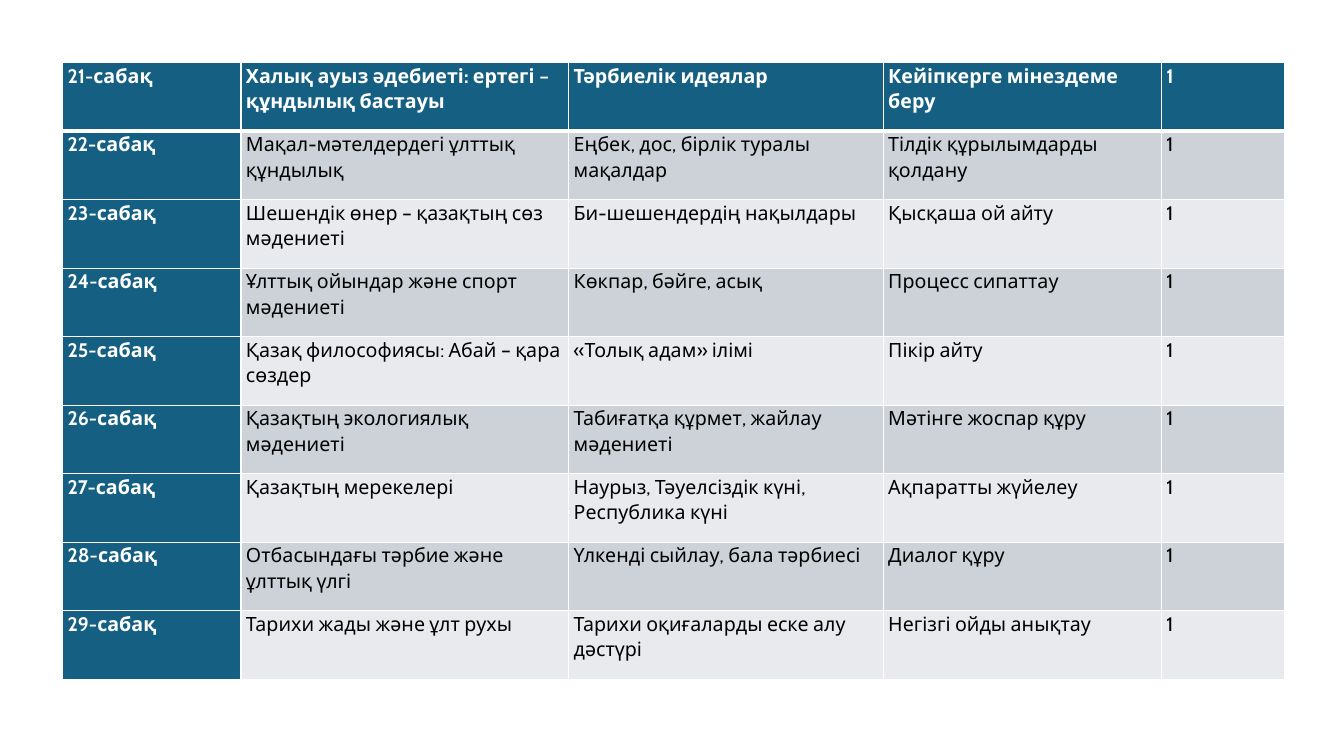
import pptx
import pptx.dml.color
import pptx.oxml
import pptx.oxml.ns
import pptx.util
from pptx.util import Inches

WHITE = pptx.dml.color.RGBColor(0xFF, 0xFF, 0xFF)
BLACK = pptx.dml.color.RGBColor(0x00, 0x00, 0x00)
TEAL = pptx.dml.color.RGBColor(0x15, 0x60, 0x82)
DARK_BAND = pptx.dml.color.RGBColor(0xCC, 0xD2, 0xD8)
LIGHT_BAND = pptx.dml.color.RGBColor(0xE8, 0xEA, 0xED)

FONT = "Cabin"
FIRST_LESSON = 21
HOURS = "1"
COLUMN_WIDTHS = [1.77, 3.25, 3.12, 2.76, 1.22]
ROW_HEIGHT = 0.68

# Topic, content and skill of each lesson
LESSONS = [
    ("Халық ауыз әдебиеті: ертегі – құндылық бастауы", "Тәрбиелік идеялар", "Кейіпкерге мінездеме беру"),
    ("Мақал-мәтелдердегі ұлттық құндылық", "Еңбек, дос, бірлік туралы мақалдар", "Тілдік құрылымдарды қолдану"),
    ("Шешендік өнер – қазақтың сөз мәдениеті", "Би-шешендердің нақылдары", "Қысқаша ой айту"),
    ("Ұлттық ойындар және спорт мәдениеті", "Көкпар, бәйге, асық", "Процесс сипаттау"),
    ("Қазақ философиясы: Абай – қара сөздер", "«Толық адам» ілімі", "Пікір айту"),
    ("Қазақтың экологиялық мәдениеті", "Табиғатқа құрмет, жайлау мәдениеті", "Мәтінге жоспар құру"),
    ("Қазақтың мерекелері", "Наурыз, Тәуелсіздік күні, Республика күні", "Ақпаратты жүйелеу"),
    ("Отбасындағы тәрбие және ұлттық үлгі", "Үлкенді сыйлау, бала тәрбиесі", "Диалог құру"),
    ("Тарихи жады және ұлт рухы", "Тарихи оқиғаларды еске алу дәстүрі", "Негізгі ойды анықтау"),
]


def set_borders(cell, widths):
    """Draw white cell borders; widths maps a side (L, R, T, B) to points."""
    properties = cell._tc.get_or_add_tcPr()
    for side, width in widths.items():
        properties.append(pptx.oxml.parse_xml(
            f'<a:ln{side} {pptx.oxml.ns.nsdecls("a")} w="{pptx.util.Pt(width)}">'
            f'<a:solidFill><a:srgbClr val="{WHITE}"/></a:solidFill></a:ln{side}>'))


def fill_cell(cell, text, fill, color, bold):
    cell.fill.solid()
    cell.fill.fore_color.rgb = fill
    cell.margin_left = cell.margin_right = Inches(0.05)
    cell.margin_top = cell.margin_bottom = 0
    cell.text_frame.text = text
    paragraph = cell.text_frame.paragraphs[0]
    paragraph.line_spacing = 1.07
    paragraph.space_after = pptx.util.Pt(8)
    font = paragraph.runs[0].font
    font.name = FONT
    font.size = pptx.util.Pt(14)
    font.bold = bold
    font.color.rgb = color


def add_lesson_table(slide):
    table = slide.shapes.add_table(
        len(LESSONS), len(COLUMN_WIDTHS), Inches(0.62), Inches(0.62),
        Inches(sum(COLUMN_WIDTHS)), Inches(ROW_HEIGHT * len(LESSONS))).table
    for column, width in zip(table.columns, COLUMN_WIDTHS):
        column.width = Inches(width)

    for row_index, lesson in enumerate(LESSONS):
        table.rows[row_index].height = Inches(ROW_HEIGHT)
        band = DARK_BAND if row_index % 2 else LIGHT_BAND
        texts = [f"{FIRST_LESSON + row_index}-сабақ", *lesson, HOURS]
        for column_index, text in enumerate(texts):
            cell = table.cell(row_index, column_index)
            # A thick rule separates the first row from the rest
            set_borders(cell, {"L": 1, "R": 1,
                               "T": 3 if row_index == 1 else 1,
                               "B": 3 if row_index == 0 else 1})
            if row_index == 0 or column_index == 0:
                fill_cell(cell, text, TEAL, WHITE, True)
            else:
                fill_cell(cell, text, band, BLACK, False)


def main():
    presentation = pptx.Presentation()
    presentation.slide_width = Inches(13.33)
    presentation.slide_height = Inches(7.5)
    slide = presentation.slides.add_slide(presentation.slide_layouts[6])
    add_lesson_table(slide)
    presentation.save("out.pptx")


if __name__ == "__main__":
    main()
